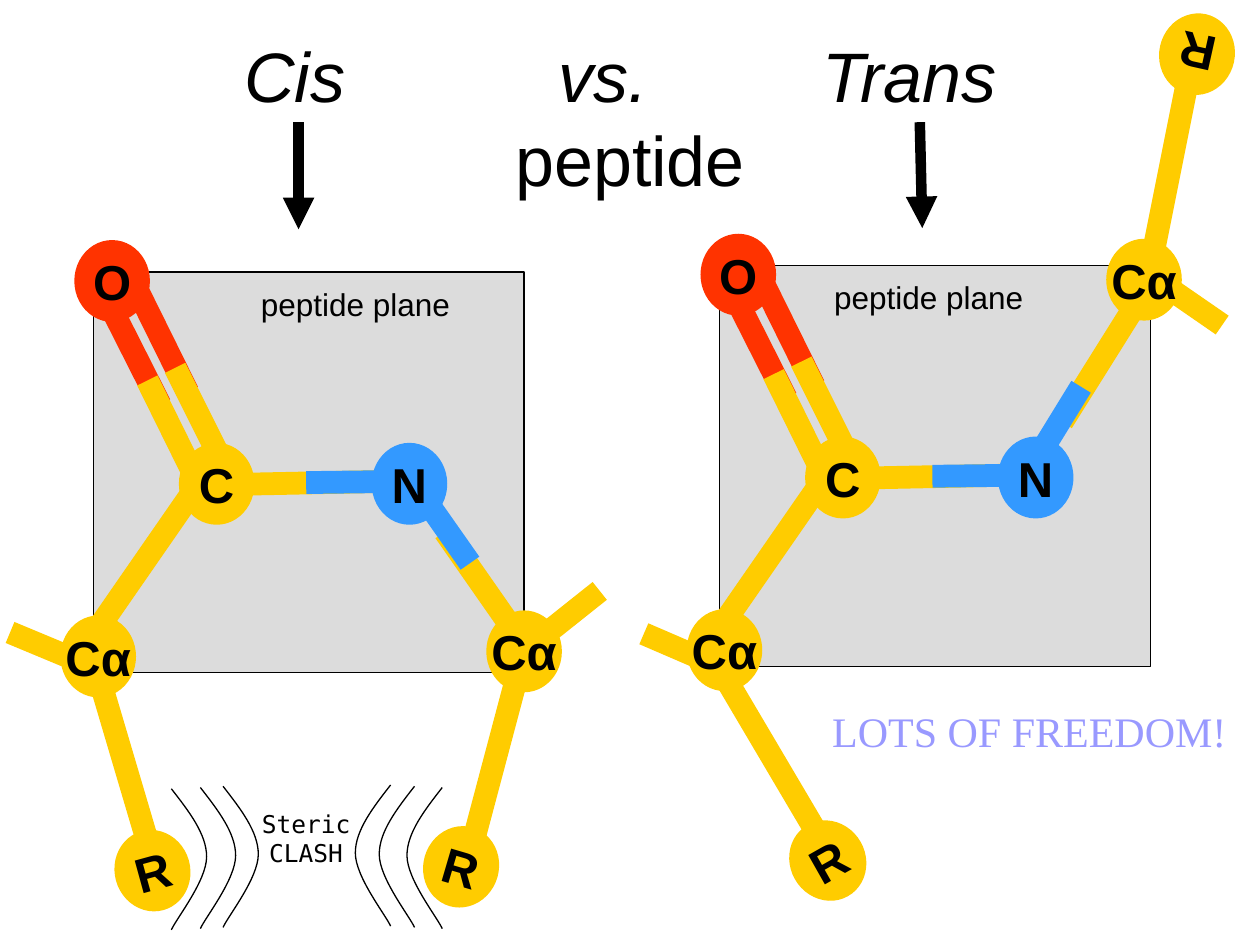
from dataclasses import dataclass

from lxml.etree import SubElement
from pptx import Presentation
from pptx.dml.color import RGBColor
from pptx.enum.shapes import MSO_CONNECTOR, MSO_SHAPE
from pptx.enum.text import MSO_ANCHOR, MSO_AUTO_SIZE, PP_ALIGN
from pptx.oxml.ns import qn
from pptx.util import Pt

PX = 9144
LINE = MSO_CONNECTOR.STRAIGHT
OVAL, RECT = MSO_SHAPE.OVAL, MSO_SHAPE.RECTANGLE
MIDDLE, TOP = MSO_ANCHOR.MIDDLE, MSO_ANCHOR.TOP
LEFT, CENTER = PP_ALIGN.LEFT, PP_ALIGN.CENTER
FIXED = MSO_AUTO_SIZE.NONE


@dataclass(frozen=True)
class Theme:
    ink: str = "000000"
    carbon: str = "FFCC00"
    oxygen: str = "FF3300"
    azote: str = "3399FF"
    plane: str = "DCDCDC"
    free: str = "9999FF"
    sans: str = "Arial"
    mono: str = "DejaVu Sans Mono"
    serif: str = "Times New Roman"
    title: int = 40
    atom: int = 28
    shout: int = 24
    label: int = 18
    clash: int = 14
    bond: int = 13
    arrow: int = 6
    thin: float = 0.75


T = Theme()

CORE = [
    (T.oxygen, 6, 12, 53, 105),
    (T.carbon, 43, 86, 84, 169),
    (T.carbon, 237, 166, 84, 169),
    (T.azote, 254, 166, 169, 167),
    (T.carbon, -6, 297, 82, 170),
    (T.oxygen, 29, 2, 75, 95),
    (T.carbon, 65, 76, 106, 158),
]
ATOMS = [
    ("Cα", T.carbon, 4, 305),
    ("C", T.carbon, 98, 168),
    ("O", T.oxygen, 15, 7),
    ("N", T.azote, 251, 168),
]
CIS = {
    "outer": [(-18, 306, -66, 286), (44, 455, 2, 313),
              (301, 454, 339, 311), (402, 253, 353, 292)],
    "ends": [(47, 475, 344.6), (292, 472, 16.4)],
    "arm": [(T.carbon, 346, 302, 279, 206), (T.azote, 299, 231, 252, 164)],
    "alpha": (342, 301),
    "label": 133,
}
TRANS = {
    "outer": [(399, 47, 357, 18), (372, -149, 343, -4),
              (79, 453, 4, 326), (-16, 311, -60, 292)],
    "ends": [(379, -168, 192.5), (86, 472, 330.5)],
    "arm": [(T.carbon, 334, 25, 272, 124), (T.azote, 287, 96, 244, 166)],
    "alpha": (337, 11),
    "label": 91,
}
WAVE = [(14, 18), (28, 36), (28, 54), (28, 73), (4, 103), (0, 112)]


def scale(*nums):
    return [num * PX for num in nums]


def style(para, face, size, color=T.ink, bold=False, slant=False, align=CENTER):
    para.alignment = align
    font = para.font
    font.name, font.size = face, Pt(size)
    font.bold, font.italic = bold, slant
    font.color.rgb = RGBColor.from_string(color)


def stroke(shape, color, width):
    shape.line.color.rgb = RGBColor.from_string(color)
    shape.line.width = Pt(width)


def draw_line(slide, color, width, ends):
    line = slide.shapes.add_connector(LINE, *scale(*ends))
    stroke(line, color, width)
    SubElement(line._element.spPr, qn("a:effectLst"))
    return line


def draw_arrow(slide, *ends):
    line = draw_line(slide, T.ink, T.arrow, ends)
    SubElement(line.line._get_or_add_ln(), qn("a:tailEnd"), type="triangle")


def draw_shape(slide, kind, fill, *box):
    shape = slide.shapes.add_shape(kind, *scale(*box))
    shape.shadow.inherit = False
    shape.fill.solid()
    shape.fill.fore_color.rgb = RGBColor.from_string(fill)
    shape.line.fill.background()
    return shape


def draw_atom(slide, name, fill, x, y, turn=0):
    wide, high = 60, 65
    atom = draw_shape(slide, OVAL, fill, x - wide / 2, y - high / 2, wide, high)
    atom.rotation = turn
    frame = atom.text_frame
    frame.word_wrap = False
    frame.vertical_anchor = MIDDLE
    frame.text = name
    style(frame.paragraphs[0], T.sans, T.atom, bold=True)


def draw_text(slide, text, box, *look, align=CENTER):
    frame = slide.shapes.add_textbox(*scale(*box)).text_frame
    frame.word_wrap = False
    frame.vertical_anchor = TOP
    frame.margin_left = frame.margin_right = 0
    frame.text = text
    for para in frame.paragraphs:
        style(para, *look, align=align)


def draw_title(slide, box):
    title = slide.shapes.title
    title.left, title.top, title.width, title.height = scale(*box)
    frame = title.text_frame
    frame.auto_size = FIXED
    frame.vertical_anchor = MIDDLE
    frame.text = "\tCis\tvs.\tTrans\npeptide"
    names, noun = frame.paragraphs
    tabs = SubElement(names._p.get_or_add_pPr(), qn("a:tabLst"))
    for stop in (134, 383, 593):
        SubElement(tabs, qn("a:tab"), pos=str(stop * PX), algn="l")
    style(names, T.sans, T.title, slant=True, align=LEFT)
    style(noun, T.sans, T.title)


def draw_unit(slide, left, top, form):
    def bond(color, x1, y1, x2, y2):
        ends = (left + x1, top + y1, left + x2, top + y2)
        draw_line(slide, color, T.bond, ends)

    for ends in form["outer"]:
        bond(T.carbon, *ends)
    for x, y, turn in form["ends"]:
        draw_atom(slide, "R", T.carbon, left + x, top + y, turn)
    plane = draw_shape(slide, RECT, T.plane, left, top, 342, 318)
    stroke(plane, T.ink, T.thin)
    for part in CORE + form["arm"]:
        bond(*part)
    for name, fill, x, y in ATOMS + [("Cα", T.carbon, *form["alpha"])]:
        draw_atom(slide, name, fill, left + x, top + y)
    box = (left + form["label"], top + 5, 160, 40)
    draw_text(slide, "peptide plane", box, T.sans, T.label, align=LEFT)


def draw_wave(slide, left, top, side):
    pen = slide.shapes.build_freeform(left, top, scale=PX)
    pen.add_line_segments([(left + side * x, top + y) for x, y in WAVE], close=False)
    wave = pen.convert_to_shape()
    route = next(wave._element.iter(qn("a:path")))
    lines = route.findall(qn("a:lnTo"))
    for start in range(0, len(lines), 3):
        bend = SubElement(route, qn("a:cubicBezTo"))
        for line in lines[start:start + 3]:
            bend.append(line[0])
            route.remove(line)
    wave.shadow.inherit = False
    wave.fill.background()
    stroke(wave, T.ink, T.thin)


def draw_clash(slide, left, top):
    for row, (near, far) in enumerate([(41, 174), (23, 193), (0, 215)]):
        draw_wave(slide, left + near, top + row + 1, 1)
        draw_wave(slide, left + far, top + row, -1)
    box = (left + 62, top + 14, 90, 77)
    draw_text(slide, "Steric\nCLASH", box, T.mono, T.clash)


def main():
    deck = Presentation()
    deck.slide_width, deck.slide_height = scale(1000, 750)
    slide = deck.slides.add_slide(deck.slide_layouts[5])
    draw_title(slide, (50, 30, 900, 125))
    draw_clash(slide, 136, 623)
    draw_unit(slide, 74, 216, CIS)
    draw_unit(slide, 571, 211, TRANS)
    draw_arrow(slide, 237, 97, 237, 182)
    draw_arrow(slide, 730, 97, 732, 181)
    box = (647, 555, 340, 101)
    draw_text(slide, "LOTS OF FREEDOM!", box, T.serif, T.shout, T.free)
    deck.save("out.pptx")


if __name__ == "__main__":
    main()
